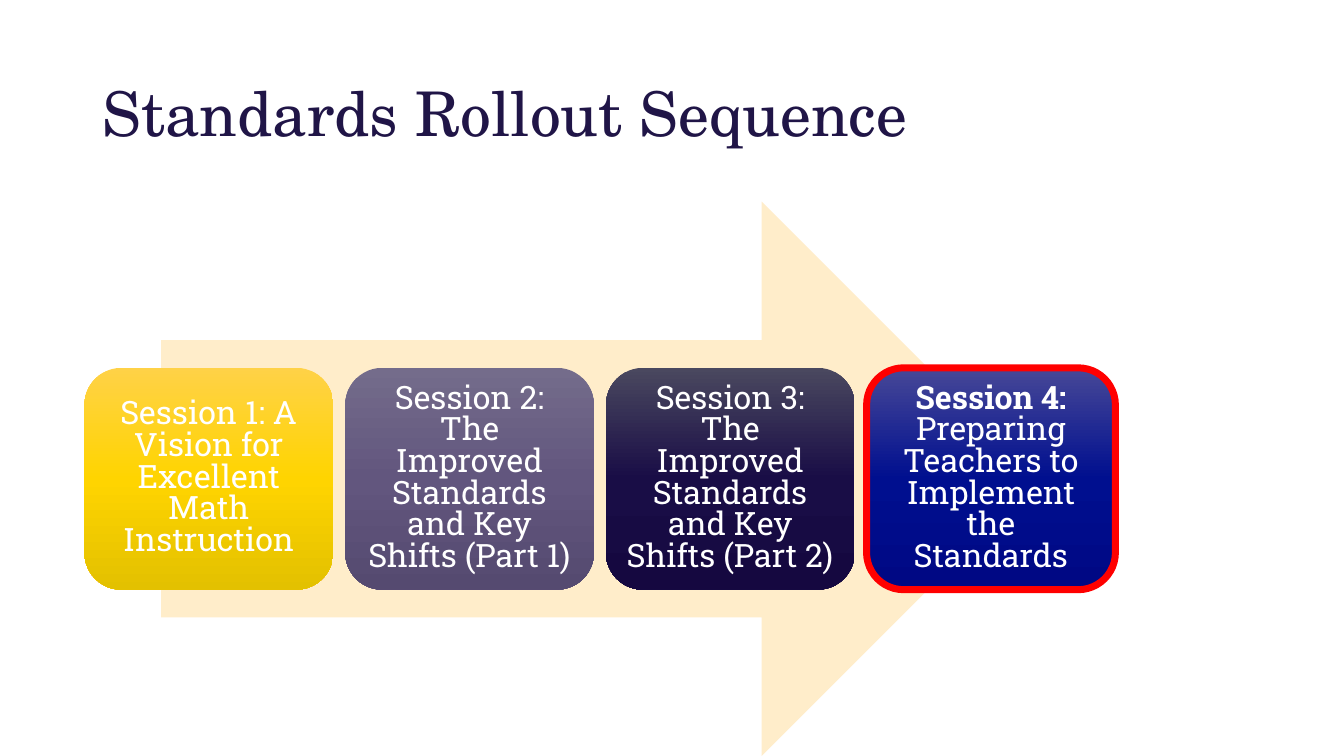
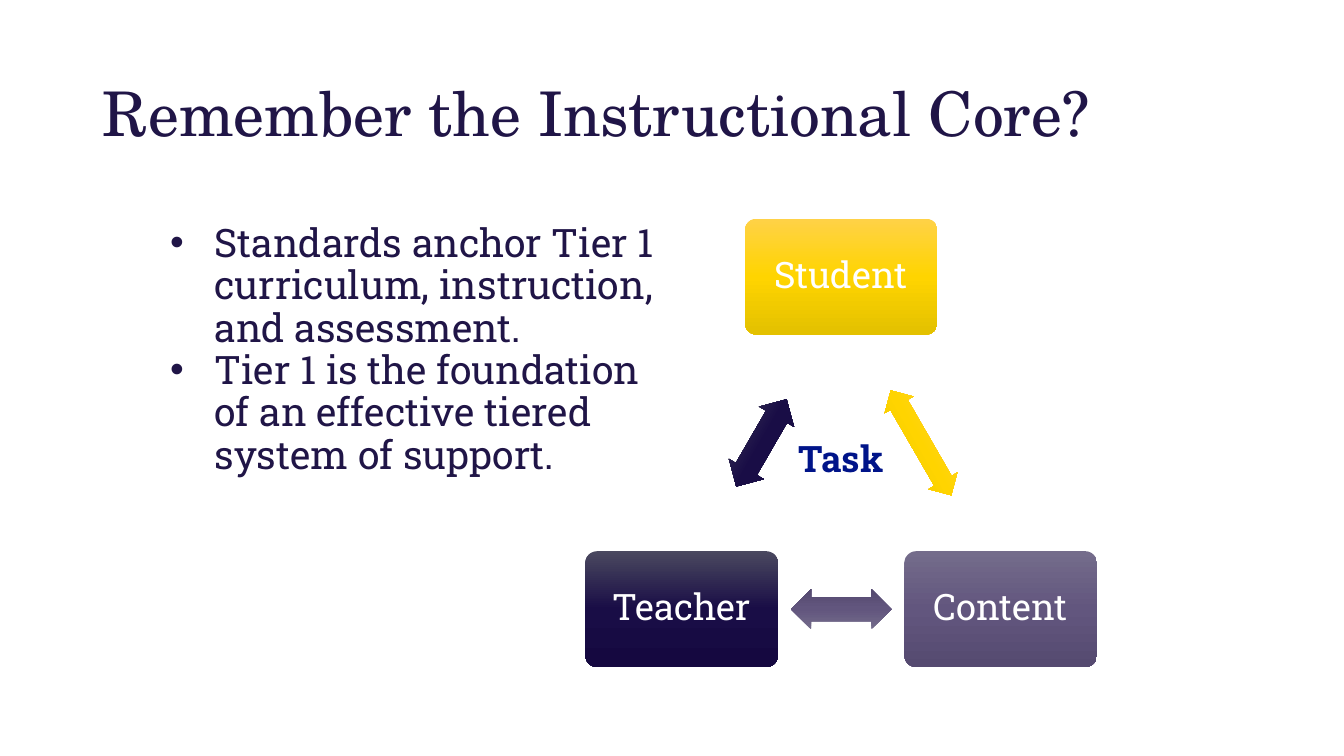
from copy import deepcopy

from pptx import Presentation
from pptx.dml.color import RGBColor
from pptx.enum.shapes import MSO_SHAPE as Shape
from pptx.enum.text import MSO_ANCHOR as Anchor, PP_ALIGN as Align
from pptx.oxml.ns import qn
from pptx.util import Cm, Pt
from lxml.etree import SubElement

HEAD, BODY = "TeX Gyre Schola", "Roboto Slab"
INK, WHITE, RED, SAND, TASK = "201547", "FFFFFF", "FF0000", "FFEDCA", "001489"
GOLD = ("FFD247", "FFD400", "E3C100")
PLUM = ("746C8B", "62567E", "554A70")
NAVY = ("4A485F", "190D46", "150840")
BLUE = ("474897", "000F8F", "000884")

# Each session: gradient, bold lead, text, line colour
SESSIONS = [
    (GOLD, "", "Session 1: A Vision for Excellent Math Instruction", None),
    (PLUM, "", "Session 2: The Improved Standards and Key Shifts (Part 1)", None),
    (NAVY, "", "Session 3: The Improved Standards and Key Shifts (Part 2)", None),
    (BLUE, "Session 4: ", "Preparing Teachers to Implement the Standards", RED),
]
POINTS = [
    "Standards anchor Tier 1 curriculum, instruction, and assessment.",
    "Tier 1 is the foundation of an effective tiered system of support.",
]
# Corners of the core: name, gradient, centre in cm
MID, SPREAD, TOP, BASE = 21.2, 4.02, 6.97, 15.35
CORE = [
    ("Student", GOLD, (MID, TOP)),
    ("Content", PLUM, (MID + SPREAD, BASE)),
    ("Teacher", NAVY, (MID - SPREAD, BASE)),
]
# Arrow from each corner to the next: turn, length, height
ARROWS = [(60, 3.05, 0.84), (180, 2.54, 1.02), (300, 2.54, 1.02)]


def color(code):
    return RGBColor.from_string(code)


def shade(shape, colors):
    """Fill with a three-stop gradient that runs from top to bottom."""
    fill = shape.fill
    fill.gradient()
    fill.gradient_angle = 270
    stops = shape._element.spPr.find(".//" + qn("a:gsLst"))
    stops.insert(1, deepcopy(stops[0]))
    for stop, code, pos in zip(fill.gradient_stops, colors, (0, 0.5, 1)):
        stop.color.rgb = color(code)
        stop.position = pos


def add_run(para, text, size, code, font=BODY, bold=False):
    run = para.add_run()
    run.text = text
    run.font.name, run.font.size, run.font.bold = font, Pt(size), bold
    run.font.color.rgb = color(code)


def add_shape(slide, kind, box, fill, adjust):
    shape = slide.shapes.add_shape(kind, *map(Cm, box))
    shape.shadow.inherit = False
    shape.line.fill.background()
    for i, value in enumerate(adjust):
        shape.adjustments[i] = value
    if isinstance(fill, str):
        shape.fill.solid()
        shape.fill.fore_color.rgb = color(fill)
    else:
        shade(shape, fill)
    return shape


def add_card(slide, box, fill, curve, runs, size, inset, space):
    """Add a rounded box with centred white text; runs are (text, bold)."""
    card = add_shape(slide, Shape.ROUNDED_RECTANGLE, box, fill, [curve])
    frame = card.text_frame
    frame.word_wrap = True
    frame.vertical_anchor = Anchor.MIDDLE
    frame.margin_left = frame.margin_right = Cm(inset)
    frame.margin_top = frame.margin_bottom = Cm(inset)
    para = frame.paragraphs[0]
    para.alignment, para.line_spacing = Align.CENTER, space
    for text, bold in runs:
        if text:
            add_run(para, text, size, WHITE, bold=bold)
    return card


def add_text(slide, box):
    frame = slide.shapes.add_textbox(*map(Cm, box)).text_frame
    frame.word_wrap = True
    return frame


def add_slide(deck, text):
    slide = deck.slides.add_slide(deck.slide_layouts[5])
    title = slide.shapes.title
    title.left, title.top, title.width, title.height = map(
        Cm, (2.34, 1.19, 26.01, 3.51))
    frame = title.text_frame
    frame.word_wrap = True
    frame.vertical_anchor = Anchor.MIDDLE
    para = frame.paragraphs[0]
    para.alignment, para.line_spacing = Align.LEFT, 0.9
    add_run(para, text, 44, INK, HEAD)
    return slide


def centre(x, y, width, height):
    return x - width / 2, y - height / 2, width, height


def add_bullet(para):
    props = para._p.get_or_add_pPr()
    props.set("marL", str(Cm(1.27)))
    props.set("indent", str(-Cm(1.12)))
    tint = SubElement(props, qn("a:buClr"))
    SubElement(tint, qn("a:srgbClr"), val=INK)
    SubElement(props, qn("a:buFont"), typeface="Arial")
    SubElement(props, qn("a:buChar"), char="•")


def build_rollout(deck):
    slide = add_slide(deck, "Standards Rollout Sequence")
    add_shape(slide, Shape.RIGHT_ARROW, (4.06, 5.08, 22.12, 13.97),
              SAND, [0.5, 0.5])
    for i, (fill, lead, text, edge) in enumerate(SESSIONS):
        card = add_card(slide, (2.13 + i * 6.57, 9.27, 6.27, 5.59), fill,
                        0.167, [(lead, True), (text, False)], 23, 0.25, 0.82)
        if edge:
            card.line.color.rgb = color(edge)
            card.line.width = Pt(5)


def build_core(deck):
    slide = add_slide(deck, "Remember the Instructional Core?")
    frame = add_text(slide, (3.89, 5.51, 12.88, 7.9))
    for i, point in enumerate(POINTS):
        para = frame.add_paragraph() if i else frame.paragraphs[0]
        para.line_spacing = 0.9
        add_bullet(para)
        add_run(para, point, 28, INK)

    for i, (name, fill, (x, y)) in enumerate(CORE):
        add_card(slide, centre(x, y, 4.85, 2.92), fill, 0.1,
                 [(name, False)], 26, 0.36, 0.9)
        x2, y2 = CORE[(i + 1) % len(CORE)][2]
        turn, length, height = ARROWS[i]
        box = centre((x + x2) / 2, (y + y2) / 2, length, height)
        arrow = add_shape(slide, Shape.LEFT_RIGHT_ARROW, box, fill, [0.6, 0.5])
        arrow.rotation = turn

    para = add_text(slide, (MID - 3.34, 10.87, 6.68, 1.37)).paragraphs[0]
    para.alignment = Align.CENTER
    add_run(para, "Task", 26, TASK, bold=True)


def main():
    deck = Presentation()
    deck.slide_width, deck.slide_height = Cm(33.87), Cm(19.05)
    build_rollout(deck)
    build_core(deck)
    deck.save("out.pptx")


if __name__ == "__main__":
    main()
